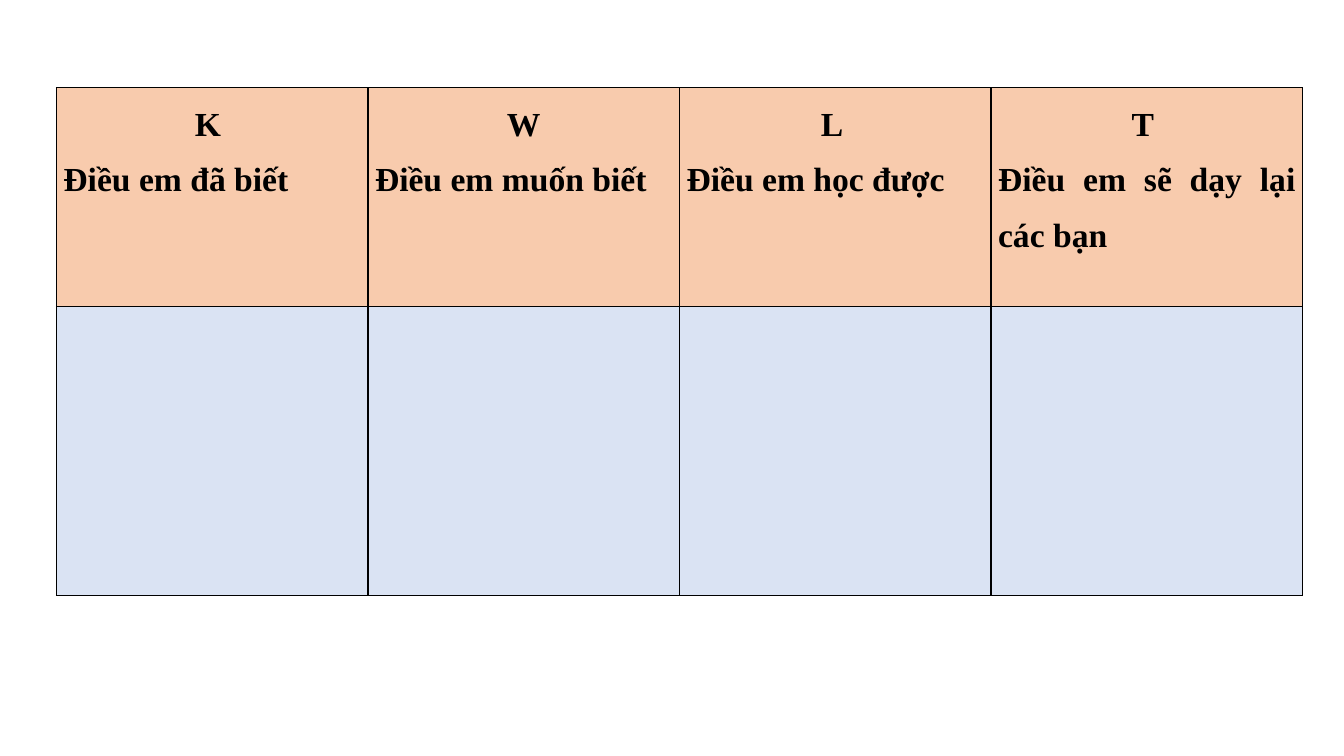
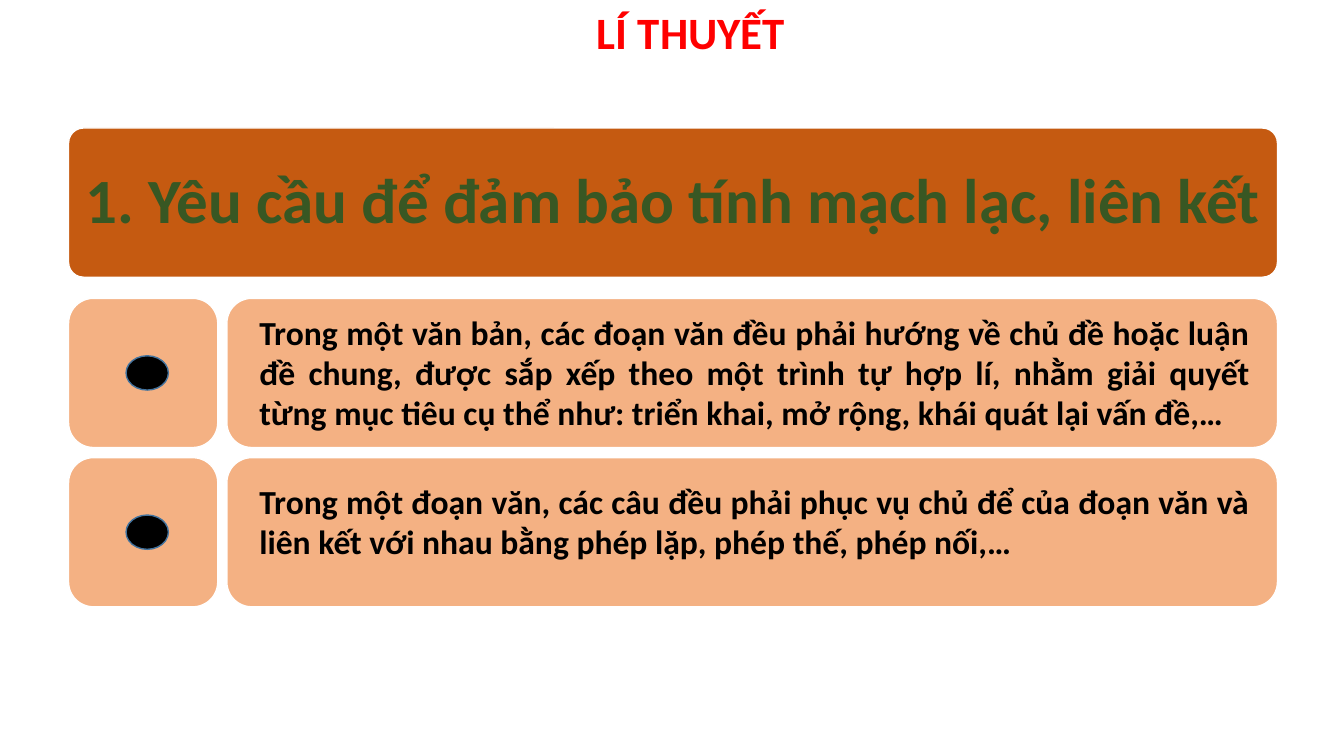
from lxml.etree import SubElement
from pptx import Presentation
from pptx.dml.color import RGBColor
from pptx.enum.shapes import MSO_SHAPE as SHAPE
from pptx.enum.text import MSO_ANCHOR as ANCHOR, MSO_AUTO_SIZE as AUTO, PP_ALIGN as ALIGN
from pptx.oxml.ns import qn
from pptx.util import Inches, Pt

BLACK = RGBColor(0x00, 0x00, 0x00)
WHITE = RGBColor(0xFF, 0xFF, 0xFF)
RED = RGBColor(0xFF, 0x00, 0x00)
GREEN = RGBColor(0x38, 0x57, 0x23)
PEACH = RGBColor(0xF8, 0xCB, 0xAD)
PALE_BLUE = RGBColor(0xDA, 0xE3, 0xF3)
RUST = RGBColor(0xC5, 0x5A, 0x11)
ORANGE = RGBColor(0xF4, 0xB1, 0x83)
BLUE = RGBColor(0x43, 0x73, 0x9E)

SANS = "Calibri"
SERIF = "Times New Roman"

KWLT = [
    ("K ", "Điều em đã biết "),
    ("W", "Điều em muốn biết "),
    ("L ", "Điều em học được "),
    ("T ", "Điều em sẽ dạy lại các bạn"),
]

TITLE = "LÍ THUYẾT "
HEADING = "1. Yêu cầu để đảm bảo tính mạch lạc, liên kết "
REQUIREMENTS = [
    (2.96, 0.06, "Trong một văn bản, các đoạn văn đều phải hướng về chủ đề hoặc luận "
                 "đề chung, được sắp xếp theo một trình tự hợp lí, nhằm giải quyết "
                 "từng mục tiêu cụ thể như: triển khai, mở rộng, khái quát lại vấn đề,…"),
    (4.54, 0.16, "Trong một đoạn văn, các câu đều phải phục vụ chủ để của đoạn văn và "
                 "liên kết với nhau bằng phép lặp, phép thế, phép nối,…"),
]


def style(p, size, color, align, font=SANS, spacing=1.0):
    p.alignment = align
    p.line_spacing = spacing
    p.space_before = Pt(0)
    for r in p.runs:
        r.font.name = font
        r.font.size = Pt(size)
        r.font.bold = True
        r.font.color.rgb = color


def set_insets(tf, left, top, right, bottom):
    tf.margin_left, tf.margin_top = Inches(left), Inches(top)
    tf.margin_right, tf.margin_bottom = Inches(right), Inches(bottom)


def add_box(s, kind, x, y, w, h, fill, line, radius=None):
    sp = s.shapes.add_shape(kind, Inches(x), Inches(y), Inches(w), Inches(h))
    sp.shadow.inherit = False
    sp.fill.solid()
    sp.fill.fore_color.rgb = fill
    sp.line.color.rgb = line
    sp.line.width = Pt(1)
    if radius is not None:
        sp.adjustments[0] = radius
    return sp


def format_cell(cell, fill):
    tc_pr = cell._tc.get_or_add_tcPr()
    for side in ("lnL", "lnR", "lnT", "lnB"):
        ln = SubElement(tc_pr, qn(f"a:{side}"), w=str(Pt(1)))
        SubElement(SubElement(ln, qn("a:solidFill")), qn("a:srgbClr"), val=str(BLACK))
    cell.fill.solid()
    cell.fill.fore_color.rgb = fill
    cell.margin_left = cell.margin_right = Inches(0.07)
    cell.margin_top = cell.margin_bottom = 0


def add_kwlt_table(s, x, y, w, row_heights):
    frame = s.shapes.add_table(len(row_heights), len(KWLT), Inches(x), Inches(y),
                               Inches(w), Inches(sum(row_heights)))
    table = frame.table
    table.first_row = table.horz_banding = False
    for row, height in zip(table.rows, row_heights):
        row.height = Inches(height)
    for col, texts in enumerate(KWLT):
        table.columns[col].width = Inches(w / len(KWLT))
        head = table.cell(0, col)
        format_cell(head, PEACH)
        format_cell(table.cell(1, col), PALE_BLUE)
        head.text_frame.text = "\n".join(texts)
        for p, align in zip(head.text_frame.paragraphs, (ALIGN.CENTER, ALIGN.JUSTIFY)):
            style(p, 24, BLACK, align, SERIF, 1.5)


def set_title(s, x, y, w, h):
    sp = s.shapes.title
    sp.left, sp.top, sp.width, sp.height = Inches(x), Inches(y), Inches(w), Inches(h)
    tf = sp.text_frame
    tf.text = TITLE
    tf.auto_size = AUTO.NONE
    tf.vertical_anchor = ANCHOR.TOP
    style(tf.paragraphs[0], 32, RED, ALIGN.CENTER)


def add_heading(s, x, y, w, h):
    tf = add_box(s, SHAPE.ROUNDED_RECTANGLE, x, y, w, h, RUST, WHITE, 0.1).text_frame
    tf.text = HEADING
    tf.word_wrap = True
    tf.vertical_anchor = ANCHOR.MIDDLE
    set_insets(tf, 0.09, 0.06, 0.09, 0.06)
    style(tf.paragraphs[0], 45, GREEN, ALIGN.CENTER, spacing=0.9)


def add_requirement(s, x, y, w, h, text, top_inset):
    gap, dot_w, dot_h = 0.09, 0.42, 0.34
    add_box(s, SHAPE.ROUNDED_RECTANGLE, x, y, h, h, ORANGE, WHITE, 0.167)
    add_box(s, SHAPE.OVAL, x + 0.57, y + (h - dot_h) / 2, dot_w, dot_h, BLACK, BLUE)
    card = add_box(s, SHAPE.ROUNDED_RECTANGLE, x + h + gap, y, w - h - gap, h,
                   ORANGE, WHITE, 0.167)
    tf = card.text_frame
    tf.text = text
    tf.word_wrap = True
    tf.vertical_anchor = ANCHOR.TOP
    set_insets(tf, 0.25, top_inset, 0.2, 0)
    style(tf.paragraphs[0], 24, BLACK, ALIGN.JUSTIFY)


def main():
    prs = Presentation()
    prs.slide_width, prs.slide_height = Inches(13.33), Inches(7.5)
    title_only, blank = prs.slide_layouts[5], prs.slide_layouts[6]

    s = prs.slides.add_slide(blank)
    add_kwlt_table(s, 0.56, 0.87, 12.36, (2.17, 2.87))

    s = prs.slides.add_slide(title_only)
    set_title(s, 0.94, 0, 11.93, 0.64)
    x, w, h = 0.68, 11.99, 1.48
    add_heading(s, x, 1.27, w, h)
    for y, top_inset, text in REQUIREMENTS:
        add_requirement(s, x, y, w, h, text, top_inset)

    prs.save("out.pptx")


if __name__ == "__main__":
    main()
